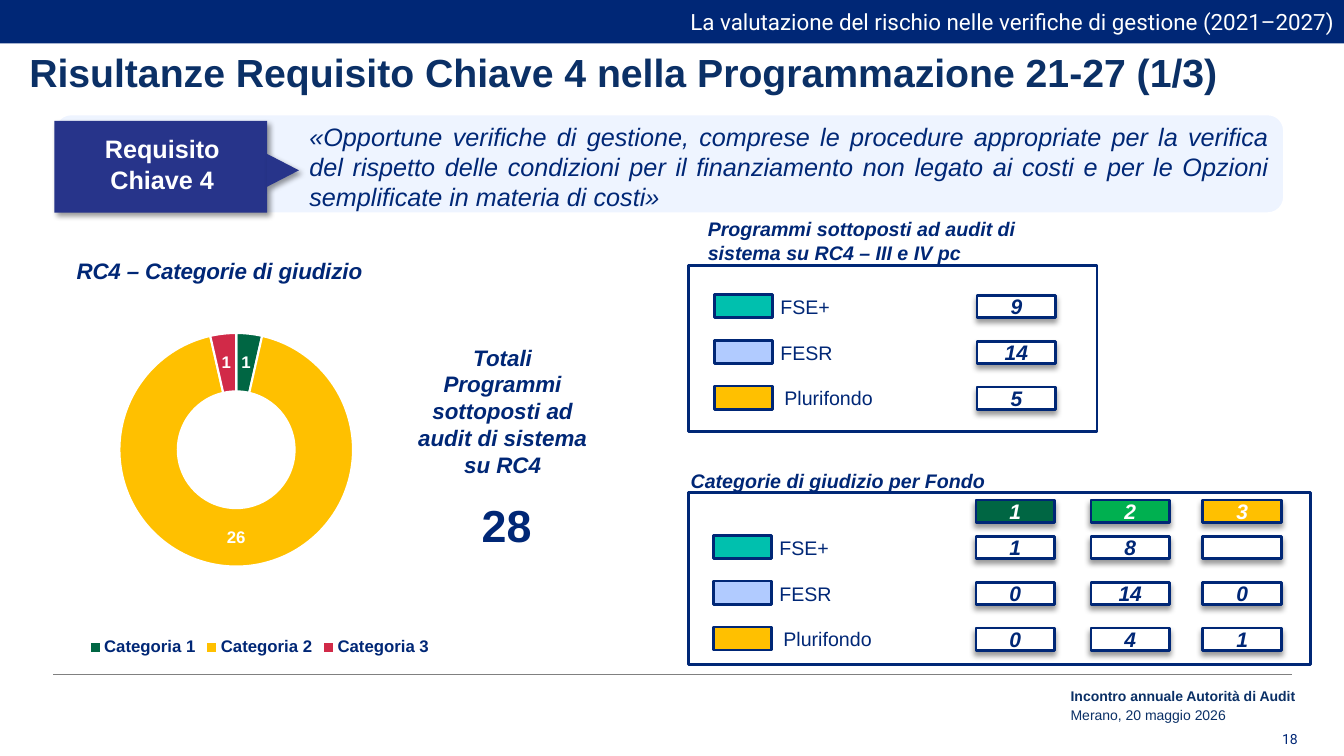
from pptx import Presentation
from pptx import util as u
from pptx.chart.data import CategoryChartData
from pptx.dml.color import RGBColor
from pptx.enum import chart as charts, shapes, text
from pptx.oxml import parse_xml
from pptx.oxml.ns import nsdecls, qn

COLORS = {
    "navy": "002776", "title": "0B3066", "indigo": "27348A", "pale": "D9E6FF",
    "white": "FFFFFF", "gray": "808080", "teal": "00C0AE", "sky": "B1CBFF",
    "amber": "FFC000", "forest": "006643", "green": "00B050", "red": "D12A48",
}
SHAPE = shapes.MSO_SHAPE
ALIGN = text.PP_ALIGN
ANCHOR = text.MSO_ANCHOR
SLIM = 0.06
ROW_STEP = 0.455
FUNDS = [("FSE+", "teal", 7.68), ("FESR", "sky", 7.68), ("Plurifondo", "amber", 7.72)]


class SlideBuilder:
    def __init__(self, presentation):
        self.slide = presentation.slides.add_slide(presentation.slide_layouts[5])

    def color(self, name):
        return RGBColor.from_string(COLORS[name])

    def font(self, font, size, color="navy", bold=False, italic=False, name="Arial"):
        font.name = name
        font.size = u.Pt(size)
        font.bold = bold
        font.italic = italic
        font.color.rgb = self.color(color)

    def fill_text(self, shape, lines, size, align=ALIGN.LEFT, anchor=ANCHOR.MIDDLE,
                  inset=(0.1, 0.05), **style):
        frame = shape.text_frame
        frame.word_wrap = True
        frame.auto_size = text.MSO_AUTO_SIZE.NONE
        frame.vertical_anchor = anchor
        frame.margin_left = frame.margin_right = u.Inches(inset[0])
        frame.margin_top = frame.margin_bottom = u.Inches(inset[1])
        frame.text = lines
        for paragraph in frame.paragraphs:
            paragraph.alignment = align
            self.font(paragraph.font, size, **style)
        return frame

    def title(self, box, words):
        shape = self.slide.shapes.title
        shape.left, shape.top, shape.width, shape.height = map(u.Inches, box)
        self.fill_text(shape, words, 28, color="title", bold=True)

    def text(self, box, words, size, **style):
        shape = self.slide.shapes.add_textbox(*map(u.Inches, box))
        return self.fill_text(shape, words, size, **style)

    def label(self, box, words, size, **style):
        return self.text(box, words, size, inset=(SLIM, SLIM), **style)

    def shape(self, kind, box, fill=None, line=None, shadow_angle=None, alpha=None):
        shape = self.slide.shapes.add_shape(kind, *map(u.Inches, box))
        if fill:
            shape.fill.solid()
            shape.fill.fore_color.rgb = self.color(fill)
        else:
            shape.fill.background()
        if alpha:
            tint = shape._element.spPr.find(".//" + qn("a:srgbClr"))
            tint.append(parse_xml(f'<a:alpha {nsdecls("a")} val="{alpha * 1000}"/>'))
        if line:
            shape.line.color.rgb = self.color(line)
            shape.line.width = u.Pt(2)
        else:
            shape.line.fill.background()
        shape.shadow.inherit = False
        if shadow_angle is not None:
            shape._element.spPr.find(qn("a:effectLst")).append(parse_xml(
                f'<a:outerShdw {nsdecls("a")} blurRad="{u.Pt(4)}" dist="{u.Pt(3)}" '
                f'dir="{shadow_angle * 60000}" algn="ctr" rotWithShape="0">'
                '<a:srgbClr val="000000"><a:alpha val="40000"/></a:srgbClr></a:outerShdw>'))
        return shape

    def value_box(self, left, top, value, fill="white", color="navy"):
        shape = self.shape(SHAPE.RECTANGLE, (left, top, 0.78, 0.22), fill, "navy", 90)
        if value:
            self.fill_text(shape, value, 15, align=ALIGN.CENTER, inset=(SLIM, SLIM),
                           color=color, bold=True, italic=True)

    def fund_rows(self, top, shift, columns, rows):
        for index, ((fund, fill, left), values) in enumerate(zip(FUNDS, rows)):
            y = top + index * ROW_STEP
            self.shape(SHAPE.RECTANGLE, (7.09 - shift, y, 0.57, 0.23), fill, "navy")
            self.label((left - shift, y - 0.05, 1.34, 0.34), fund, 14)
            for column, value in zip(columns, values):
                self.value_box(column, y + 0.01, value)

    def rule(self, start, end):
        line = self.slide.shapes.add_connector(
            shapes.MSO_CONNECTOR.STRAIGHT, *map(u.Inches, start + end))
        line.line.color.rgb = self.color("gray")
        line.line.width = u.Pt(0.75)
        line._element.spPr.append(parse_xml(f'<a:effectLst {nsdecls("a")}/>'))

    def place(self, parent, index, target, **values):
        for layout in parent.findall(qn("c:layout")):
            parent.remove(layout)
        inner = '<c:layoutTarget val="inner"/>' if target else ""
        modes = "".join(f'<c:{key}Mode val="edge"/>' for key in "xy")
        sizes = "".join(f'<c:{key} val="{value}"/>' for key, value in values.items())
        parent.insert(index, parse_xml(
            f'<c:layout {nsdecls("c")}><c:manualLayout>{inner}{modes}{sizes}'
            '</c:manualLayout></c:layout>'))

    def doughnut(self, box, title, points):
        data = CategoryChartData()
        data.categories = [name for name, _, _ in points]
        data.add_series("Programmi", [value for _, value, _ in points])
        chart = self.slide.shapes.add_chart(
            charts.XL_CHART_TYPE.DOUGHNUT, *map(u.Inches, box), data).chart
        self.font(chart.font, 10, name="Roboto")
        chart.has_title = True
        chart.chart_title.text_frame.text = title
        heading = chart.chart_title.text_frame.paragraphs[0]
        self.font(heading.font, 16, bold=True, italic=True)
        self.place(chart.chart_title._element, 1, False, x=0.14, y=0.05)
        self.place(chart._chartSpace.chart.plotArea, 0, True, x=0.23, y=0.19, w=0.45, h=0.64)
        chart.has_legend = True
        chart.legend.position = charts.XL_LEGEND_POSITION.BOTTOM
        chart.legend.include_in_layout = False
        self.font(chart.legend.font, 12, bold=True)
        plot = chart.plots[0]
        plot.vary_by_categories = True
        plot._element.find(qn("c:holeSize")).set("val", "75")
        plot.has_data_labels = True
        labels = plot.data_labels
        labels.show_value = True
        labels.show_percentage = False
        self.font(labels.font, 12, "white", bold=True)
        for index, (_, _, fill) in enumerate(points):
            slice_format = plot.series[0].points[index].format
            slice_format.fill.solid()
            slice_format.fill.fore_color.rgb = self.color(fill)
            slice_format.line.color.rgb = self.color("white")
            slice_format.line.width = u.Pt(1.5)


def main():
    presentation = Presentation()
    presentation.slide_width = u.Inches(13.33)
    presentation.slide_height = u.Inches(7.5)
    builder = SlideBuilder(presentation)

    builder.rule((0.53, 6.69), (12.81, 6.69))
    builder.text((8.83, 7.23, 4.14, 0.2), "18", 10, align=ALIGN.RIGHT, name="Roboto")
    builder.title((0.19, 0.42, 12.2, 0.58),
                  "Risultanze Requisito Chiave 4 nella Programmazione 21-27 (1/3)")
    footer = builder.text((10.52, 6.77, 2.81, 0.43),
                          "Incontro annuale Autorità di Audit\nMerano, 20 maggio 2026",
                          10, color="title", anchor=ANCHOR.TOP)
    footer.paragraphs[0].font.bold = True
    footer.paragraphs[1].space_before = u.Pt(2)

    header = builder.shape(SHAPE.RECTANGLE, (0, 0, 13.33, 0.43), "navy")
    builder.fill_text(header,
                      "La valutazione del rischio nelle verifiche di gestione (2021–2027)",
                      16, align=ALIGN.RIGHT, color="white", name="Roboto")

    builder.shape(SHAPE.FLOWCHART_ALTERNATE_PROCESS, (0.54, 1.13, 12.2, 0.99),
                  "pale", "white", alpha=43)
    builder.shape(SHAPE.RECTANGLE, (0.54, 1.2, 2.11, 0.91), "indigo", shadow_angle=45)
    builder.text((0.63, 1.27, 1.96, 0.71), "Requisito Chiave 4", 18,
                 align=ALIGN.CENTER, color="white", bold=True)
    pointer = builder.shape(SHAPE.ISOSCELES_TRIANGLE, (2.64, 1.53, 0.33, 0.32),
                            "indigo", shadow_angle=45)
    pointer.rotation = 90
    builder.text((2.97, 1.15, 9.71, 1.01),
                 "«Opportune verifiche di gestione, comprese le procedure appropriate per la "
                 "verifica del rispetto delle condizioni per il finanziamento non legato ai costi "
                 "e per le Opzioni semplificate in materia di costi»",
                 18, align=ALIGN.JUSTIFY, anchor=ANCHOR.TOP, italic=True)

    builder.doughnut((0, 2.29, 5.15, 4.26), "RC4 – Categorie di giudizio", [
        ("Categoria 1", 1, "forest"), ("Categoria 2", 26, "amber"), ("Categoria 3", 1, "red")])
    builder.label((4.02, 3.35, 1.93, 1.4),
                  "Totali Programmi sottoposti ad audit di sistema su RC4", 16,
                  align=ALIGN.CENTER, anchor=ANCHOR.TOP, bold=True, italic=True)
    builder.label((4.43, 4.76, 1.19, 0.88), "28", 32, align=ALIGN.CENTER, bold=True)

    builder.shape(SHAPE.RECTANGLE, (6.83, 2.63, 4.05, 1.65), line="navy")
    builder.label((6.96, 2.19, 3.82, 0.39),
                  "Programmi sottoposti ad audit di sistema su RC4 – III e IV pc",
                  14, bold=True, italic=True)
    builder.fund_rows(2.92, 0, [9.69], [["9"], ["14"], ["5"]])

    builder.shape(SHAPE.RECTANGLE, (6.83, 4.89, 6.17, 1.7), line="navy")
    builder.label((6.79, 4.57, 6.54, 0.39), "Categorie di giudizio per Fondo",
                  14, bold=True, italic=True)
    columns = [9.68, 10.82, 11.93]
    for left, category, fill in zip(columns, "123", ["forest", "green", "amber"]):
        builder.value_box(left, 4.96, category, fill, "white")
    builder.fund_rows(5.31, 0.01, columns,
                      [["1", "8", ""], ["0", "14", "0"], ["0", "4", "1"]])

    presentation.save("out.pptx")


if __name__ == "__main__":
    main()
